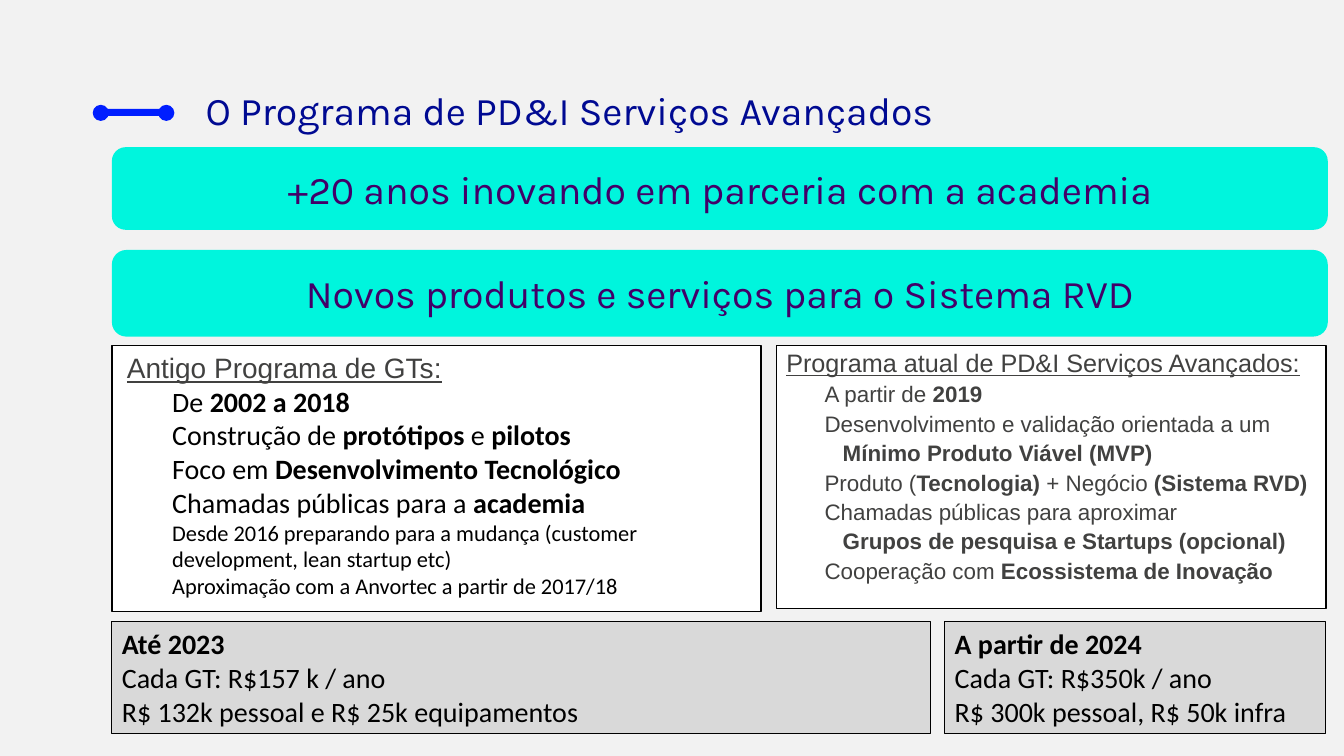
"""Build the slide about the advanced services research programme."""
from dataclasses import dataclass

from pptx import Presentation
from pptx.dml.color import RGBColor
from pptx.enum.shapes import MSO_SHAPE as Shape
from pptx.enum.text import MSO_ANCHOR as Anchor, PP_ALIGN as Align
from pptx.util import Inches, Pt


@dataclass(frozen=True)
class Theme:
    background: str = "F2F2F2"
    blue: str = "001EFF"
    navy: str = "000A92"
    aqua: str = "00F5DD"
    purple: str = "420068"
    white: str = "FFFFFF"
    silver: str = "D9D9D9"
    grey: str = "414140"
    black: str = "000000"
    display: str = "Karla"
    sans: str = "Arial"
    body: str = "Calibri"
    title_size: int = 28
    large: int = 20
    medium: int = 18
    small: int = 16


THEME = Theme()

TITLE = "O Programa de PD&I Serviços Avançados"
BANNERS = [
    ("+20 anos inovando em parceria com a academia", 1.46, 0.82),
    ("Novos produtos e serviços para o Sistema RVD", 2.48, 0.86),
]
OLD_HEADING = "Antigo Programa de GTs:"
OLD_POINTS = [
    "De **2002 a 2018**",
    "Construção de **protótipos** e **pilotos**",
    "Foco em **Desenvolvimento Tecnológico**",
    "Chamadas públicas para a **academia**",
]
OLD_NOTES = [
    "Desde 2016 preparando para a mudança (customer development, lean startup etc)",
    "Aproximação com a Anvortec a partir de 2017/18",
]
NEW_HEADING = "Programa atual de PD&I Serviços Avançados:"
NEW_POINTS = [
    ("A partir de **2019**", 0.38),
    ("Desenvolvimento e validação orientada a um", 0.38),
    ("**Mínimo Produto Viável (MVP)**", 0.56),
    ("Produto (**Tecnologia)** + Negócio **(Sistema RVD)**", 0.38),
    ("Chamadas públicas para aproximar", 0.38),
    ("**Grupos de pesquisa e Startups (opcional)**", 0.56),
    ("Cooperação com **Ecossistema de Inovação**", 0.38),
]
BUDGETS = [
    (1.11, 8.12, ["**Até 2023**", "Cada GT: R$157 k / ano",
                  "R$ 132k pessoal e R$ 25k equipamentos"]),
    (9.37, 3.78, ["**A partir de 2024**", "Cada GT: R$350k / ano",
                  "R$ 300k pessoal, R$ 50k infra"]),
]


def add_box(page, kind, place, fill, line=None, anchor=Anchor.TOP):
    box = page.shapes.add_shape(kind, *map(Inches, place))
    box.shadow.inherit = False
    box.fill.solid()
    box.fill.fore_color.rgb = RGBColor.from_string(fill)
    if line:
        box.line.color.rgb = RGBColor.from_string(THEME.black)
        box.line.width = Pt(line)
    else:
        box.line.fill.background()
    box.text_frame.word_wrap = True
    box.text_frame.vertical_anchor = anchor
    return box


def write(box, text, *, font, size, color, align=Align.LEFT, indent=0,
          spacing=None, before=0, underline=False):
    """Add one paragraph, with bold parts between double asterisks."""
    frame = box.text_frame
    first = frame.paragraphs[0]
    para = frame.add_paragraph() if first.runs else first
    para.alignment = align
    if indent:
        para._p.get_or_add_pPr().set("marL", str(Inches(indent)))
    if spacing:
        para.line_spacing = spacing
    if before:
        para.space_before = Pt(before)
    for index, part in enumerate(text.split("**")):
        if part:
            span = para.add_run()
            span.text = part
            span.font.name = font
            span.font.size = Pt(size)
            span.font.bold = index % 2 == 1
            span.font.underline = underline
            span.font.color.rgb = RGBColor.from_string(color)


def add_title(page):
    for kind, place in [
        (Shape.OVAL, (0.92, 1.04, 0.16, 0.16)),
        (Shape.OVAL, (1.57, 1.04, 0.16, 0.16)),
        (Shape.RECTANGLE, (1, 1.08, 0.66, 0.07)),
    ]:
        add_box(page, kind, place, THEME.blue)
    title = page.shapes.add_textbox(*map(Inches, (1.94, 0.86, 9.01, 0.52)))
    title.text_frame.word_wrap = True
    title.text_frame.vertical_anchor = Anchor.BOTTOM
    write(title, TITLE, font=THEME.display, size=THEME.title_size,
          color=THEME.navy, spacing=0.9)


def add_banners(page):
    for text, top, height in BANNERS:
        banner = add_box(page, Shape.ROUNDED_RECTANGLE, (1.11, top, 12.06, height),
                         THEME.aqua, anchor=Anchor.MIDDLE)
        write(banner, text, font=THEME.display, size=THEME.title_size,
              color=THEME.purple, align=Align.CENTER)


def add_programmes(page):
    old = add_box(page, Shape.RECTANGLE, (1.11, 3.43, 6.44, 2.64), THEME.white, 1)
    write(old, OLD_HEADING, font=THEME.sans, size=THEME.large, color=THEME.grey,
          indent=0.05, underline=True)
    for lines, size in [(OLD_POINTS, THEME.large), (OLD_NOTES, THEME.small)]:
        for text in lines:
            write(old, text, font=THEME.body, size=size, color=THEME.black, indent=0.5)

    new = add_box(page, Shape.RECTANGLE, (7.7, 3.43, 5.45, 2.61), THEME.white, 1)
    write(new, NEW_HEADING, font=THEME.sans, size=THEME.medium, color=THEME.grey,
          spacing=0.9, underline=True)
    for text, indent in NEW_POINTS:
        write(new, text, font=THEME.sans, size=THEME.small, color=THEME.grey,
              indent=indent, spacing=0.9, before=3.8)


def add_budgets(page):
    for left, width, lines in BUDGETS:
        budget = add_box(page, Shape.RECTANGLE, (left, 6.17, width, 1.11),
                         THEME.silver, 0.75)
        for text in lines:
            write(budget, text, font=THEME.body, size=THEME.large, color=THEME.black)


def main():
    deck = Presentation()
    deck.slide_width, deck.slide_height = Inches(13.33), Inches(7.5)
    page = deck.slides.add_slide(deck.slide_layouts[6])
    page.background.fill.solid()
    page.background.fill.fore_color.rgb = RGBColor.from_string(THEME.background)
    add_title(page)
    add_banners(page)
    add_programmes(page)
    add_budgets(page)
    deck.save("out.pptx")


if __name__ == "__main__":
    main()
